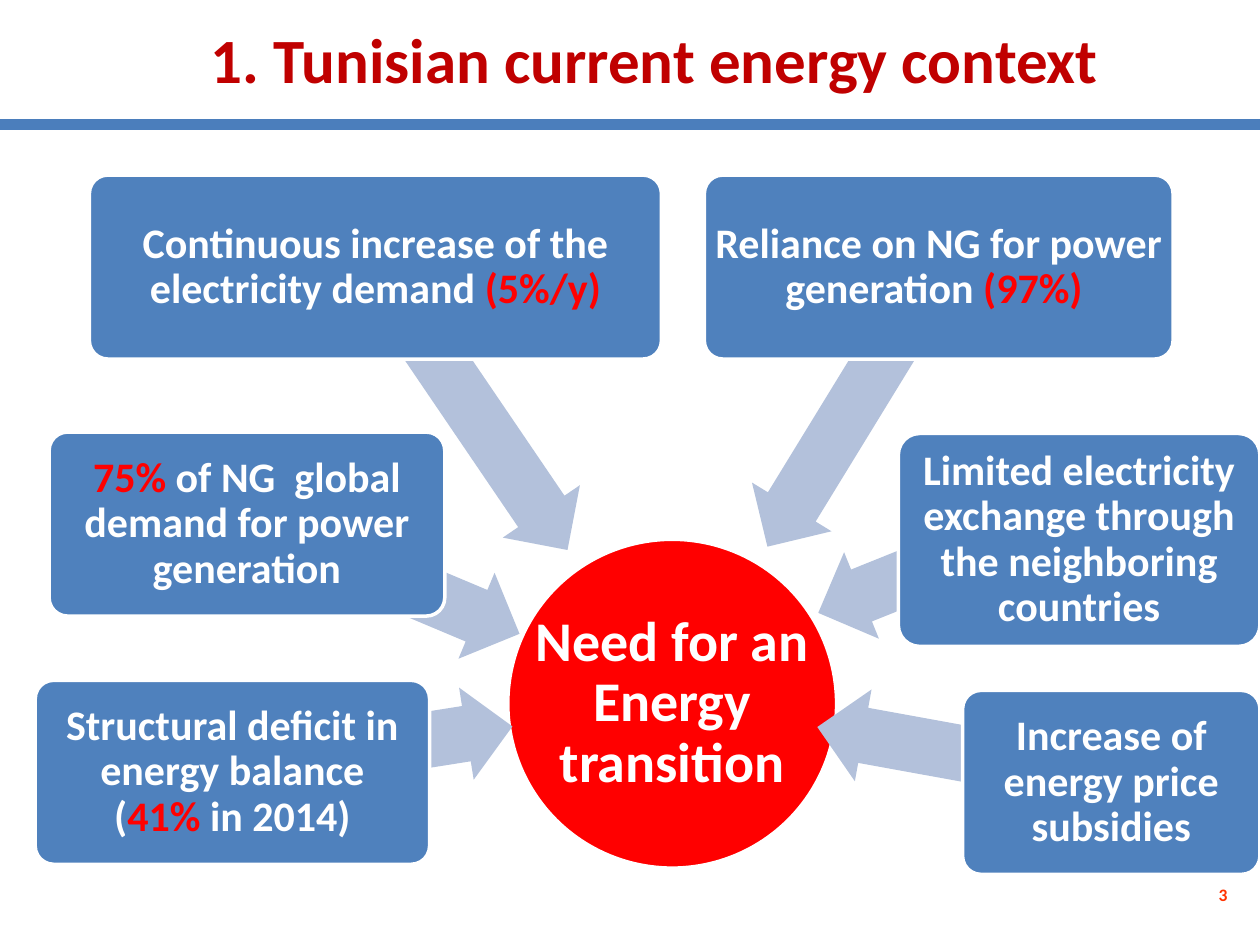
from dataclasses import dataclass

from lxml.etree import SubElement
from pptx import Presentation
from pptx.dml.color import RGBColor
from pptx.enum.shapes import MSO_CONNECTOR, MSO_SHAPE
from pptx.enum.text import MSO_ANCHOR, PP_ALIGN
from pptx.oxml.ns import qn
from pptx.shapes.autoshape import Shape
from pptx.slide import Slide
from pptx.text.text import TextFrame
from pptx.util import Emu, Pt

PX = 9144  # 100 px to the inch
FONT = "Calibri"
ARROW_HEIGHT = 74
COLORS = {
    "title": "C00000",
    "rule": "4B7EBC",
    "number": "FF3300",
    "center": "FF0000",
    "accent": "FF0000",
    "card": "4F81BD",
    "arrow": "B3C1DB",
    "white": "FFFFFF",
}


@dataclass
class Box:
    left: int
    top: int
    width: int
    height: int

    def emu(self) -> list[Emu]:
        return [Emu(v * PX) for v in (self.left, self.top, self.width, self.height)]


@dataclass
class Driver:
    """A card and the arrow that leads from it to the centre."""
    card: Box
    arrow_left: int
    arrow_top: int
    arrow_width: int
    angle: float
    lead: str
    accent: str = ""
    tail: str = ""


DRIVERS = [
    Driver(Box(28, 540, 313, 146), 197, 556, 211, 171,
           "Structural deficit in energy balance\n(", "41%", " in 2014)"),
    Driver(Box(39, 343, 314, 146), 199, 423, 222, 202.8,
           "", "75%", " of NG  global demand for power generation"),
    Driver(Box(71, 139, 454, 146), 238, 287, 272, 235.8,
           "Continuous increase of the electricity demand ", "(5%/y)"),
    Driver(Box(559, 139, 372, 146), 547, 286, 260, 301.5,
           "Reliance on NG for power generation ", "(97%) "),
    Driver(Box(713, 344, 287, 169), 642, 411, 206, 338.1,
           "Limited electricity exchange through the neighboring countries"),
    Driver(Box(764, 548, 236, 146), 647, 559, 212, 10.3,
           "Increase of energy price subsidies"),
]


def rgb(name: str) -> RGBColor:
    return RGBColor.from_string(COLORS[name])


def add_filled(page: Slide, kind: MSO_SHAPE, box: Box, fill: str, outlined: bool) -> Shape:
    shape = page.shapes.add_shape(kind, *box.emu())
    shape.shadow.inherit = False
    shape.fill.solid()
    shape.fill.fore_color.rgb = rgb(fill)
    if outlined:
        shape.line.color.rgb = rgb("white")
        shape.line.width = Pt(2)
    else:
        shape.line.fill.background()
    return shape


def write(frame: TextFrame, size: int, color: str, lead: str, accent: str = "",
          tail: str = "", align: PP_ALIGN = PP_ALIGN.CENTER,
          spacing: float = 0.9, margin: int = 0) -> None:
    frame.word_wrap = True
    frame.vertical_anchor = MSO_ANCHOR.MIDDLE
    frame.margin_left = frame.margin_right = Emu(margin * PX)
    frame.margin_top = frame.margin_bottom = Emu(margin * PX)
    para = frame.paragraphs[0]
    para.text = lead
    para.alignment = align
    para.line_spacing = spacing
    accent_position = len(para.runs) if accent else -1
    for text in filter(None, (accent, tail)):
        para.add_run().text = text
    for position, span in enumerate(para.runs):
        span.font.name = FONT
        span.font.size = Pt(size)
        span.font.bold = True
        span.font.color.rgb = rgb("accent" if position == accent_position else color)


def add_header(page: Slide) -> None:
    title = page.shapes.title
    title.left, title.top, title.width, title.height = Box(98, 0, 843, 92).emu()
    write(title.text_frame, 36, "title", "1. Tunisian current energy context", spacing=1.0)
    rule = page.shapes.add_connector(MSO_CONNECTOR.STRAIGHT, *Box(0, 99, 1000, 99).emu())
    rule.line.color.rgb = rgb("rule")
    rule.line.width = Pt(6)
    SubElement(rule.element.spPr, qn("a:effectLst"))


def add_center(page: Slide) -> None:
    box = Box(403, 428, 261, 261)
    add_filled(page, MSO_SHAPE.OVAL, box, "center", True)
    label = page.shapes.add_textbox(*box.emu())
    write(label.text_frame, 32, "white", "Need for an Energy transition", margin=2)


def add_driver(page: Slide, driver: Driver) -> None:
    arrow_box = Box(driver.arrow_left, driver.arrow_top, driver.arrow_width, ARROW_HEIGHT)
    arrow = add_filled(page, MSO_SHAPE.LEFT_ARROW, arrow_box, "arrow", False)
    arrow.adjustments[0] = 0.6
    arrow.rotation = driver.angle
    card = add_filled(page, MSO_SHAPE.ROUNDED_RECTANGLE, driver.card, "card", True)
    card.adjustments[0] = 0.1
    write(card.text_frame, 24, "white", driver.lead, driver.accent, driver.tail)


def add_page_number(page: Slide) -> None:
    number = page.shapes.add_textbox(*Box(667, 690, 317, 40).emu())
    write(number.text_frame, 10, "number", "3", align=PP_ALIGN.RIGHT,
          spacing=1.0, margin=10)


def main() -> None:
    deck = Presentation()
    deck.slide_width, deck.slide_height = Emu(1000 * PX), Emu(750 * PX)
    page = deck.slides.add_slide(deck.slide_layouts[5])
    add_header(page)
    add_center(page)
    for driver in DRIVERS:
        add_driver(page, driver)
    add_page_number(page)
    deck.save("out.pptx")


if __name__ == "__main__":
    main()
